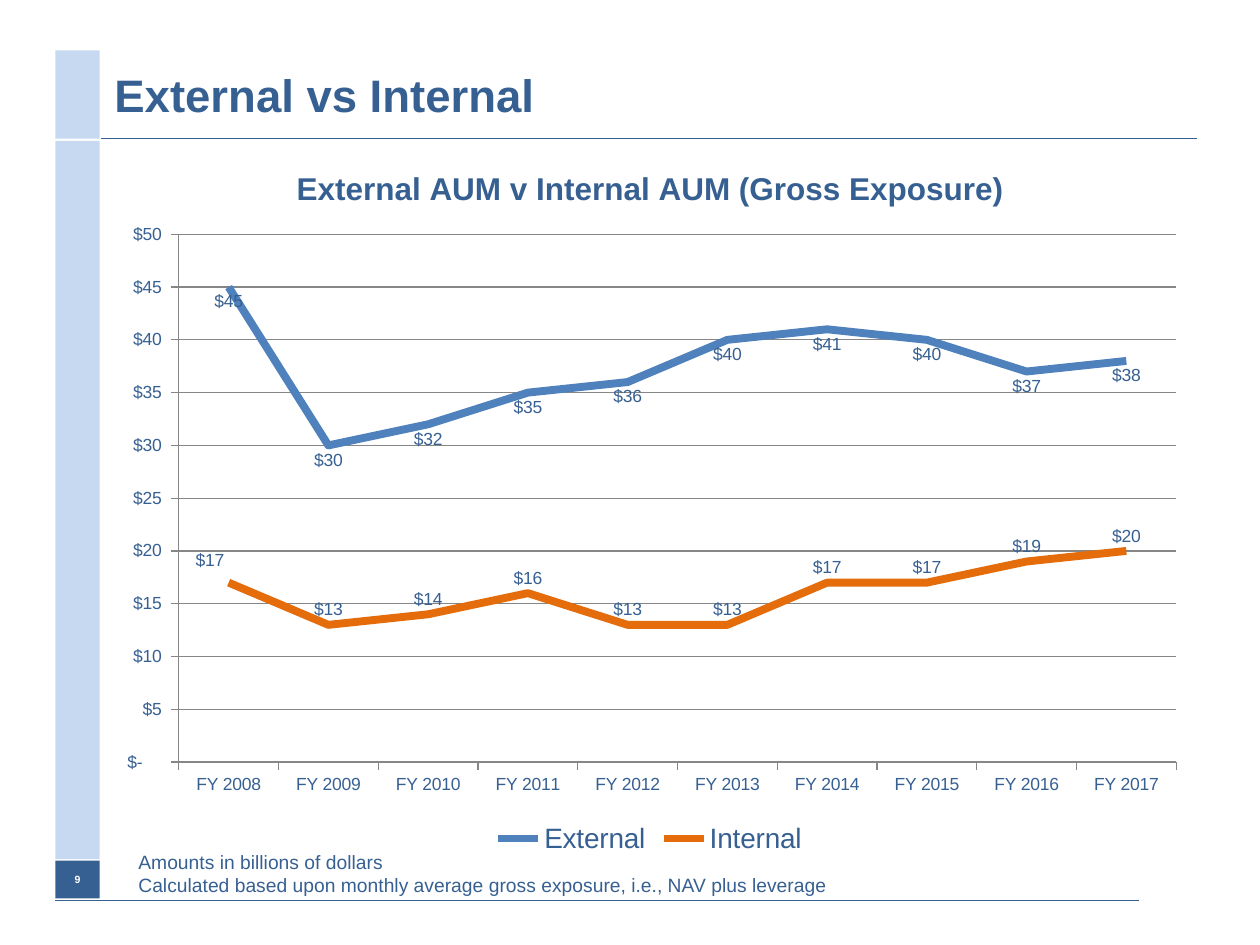
"""Build the External vs Internal slide with its line chart."""
from dataclasses import dataclass

from lxml.etree import SubElement
from pptx import Presentation
from pptx.chart.data import CategoryChartData
from pptx.dml.color import RGBColor
from pptx.enum.chart import XL_CHART_TYPE as ChartType
from pptx.enum.chart import XL_LABEL_POSITION as LabelPos
from pptx.enum.chart import XL_LEGEND_POSITION as LegendPos
from pptx.enum.chart import XL_MARKER_STYLE as Marker
from pptx.enum.chart import XL_TICK_MARK as Tick
from pptx.enum.shapes import MSO_CONNECTOR as Connector
from pptx.enum.shapes import MSO_SHAPE as Shape
from pptx.enum.text import MSO_ANCHOR as Anchor
from pptx.enum.text import PP_ALIGN as Align
from pptx.oxml import parse_xml
from pptx.oxml.ns import nsdecls, qn
from pptx.util import Pt

NAVY = RGBColor(0x37, 0x60, 0x92)
PALE = RGBColor(0xC6, 0xD9, 0xF1)
WHITE = RGBColor(0xFF, 0xFF, 0xFF)
BLUE = RGBColor(0x4F, 0x81, 0xBD)
ORANGE = RGBColor(0xE4, 0x6C, 0x0A)
GREY = RGBColor(0x86, 0x86, 0x86)
FONT = "Arial"
DOLLARS = '_("$"* #,##0_);_("$"* \\(#,##0\\);_("$"* "-"??_);_(@_)'


@dataclass(frozen=True)
class Box:
    left: float
    top: float
    width: float
    height: float

    def lengths(self) -> tuple:
        return Pt(self.left), Pt(self.top), Pt(self.width), Pt(self.height)


@dataclass(frozen=True)
class Rule:
    start: float
    end: float
    y: float
    weight: float


@dataclass(frozen=True)
class Trend:
    name: str
    values: tuple
    color: RGBColor
    label_position: LabelPos


SIDE_LEFT, SIDE_WIDTH = 31.7, 25.2
SIDE_BLOCKS = (
    Box(SIDE_LEFT, 80.6, SIDE_WIDTH, 410.4),
    Box(SIDE_LEFT, 28.8, SIDE_WIDTH, 50.4),
)
PAGE_BLOCK = Box(SIDE_LEFT, 491.8, SIDE_WIDTH, 21.6)
RULES = (Rule(SIDE_LEFT, 650.9, 514.8, 0.75), Rule(57.6, 684, 79.2, 1))
HEADING = Box(58.3, 28.8, 625.7, 50.4)
FOOTNOTE = Box(72, 484.6, 576, 28.8)
CHART = Box(58.3, 80.6, 626.4, 410.4)
PLOT = {"x": 0.07, "y": 0.13, "w": 0.91, "h": 0.735}
YEARS = [f"FY {year}" for year in range(2008, 2018)]
TRENDS = (
    Trend("External", (45, 30, 32, 35, 36, 40, 41, 40, 37, 38), BLUE, LabelPos.BELOW),
    Trend("Internal", (17, 13, 14, 16, 13, 13, 17, 17, 19, 20), ORANGE, LabelPos.ABOVE),
)


def style_font(font, size: float, color: RGBColor = NAVY, bold: bool = False) -> None:
    font.name, font.size, font.bold = FONT, Pt(size), bold
    font.color.rgb = color


def style_line(line, color: RGBColor, weight: float) -> None:
    line.color.rgb, line.width = color, Pt(weight)


def write(frame, text: str, size: float, color: RGBColor = NAVY,
          bold: bool = False, align: Align = Align.LEFT) -> None:
    frame.word_wrap, frame.vertical_anchor = True, Anchor.MIDDLE
    frame.text = text
    for paragraph in frame.paragraphs:
        paragraph.alignment = align
        for run in paragraph.runs:
            style_font(run.font, size, color, bold)


def add_block(slide, box: Box, color: RGBColor):
    block = slide.shapes.add_shape(Shape.RECTANGLE, *box.lengths())
    block.shadow.inherit = False
    block.fill.solid()
    block.fill.fore_color.rgb = color
    block.line.fill.background()
    return block


def add_rule(slide, rule: Rule) -> None:
    line = slide.shapes.add_connector(
        Connector.STRAIGHT, Pt(rule.start), Pt(rule.y), Pt(rule.end), Pt(rule.y))
    style_line(line.line, NAVY, rule.weight)
    SubElement(line._element.spPr, qn("a:effectLst"))


def manual_layout(places: dict, inner: bool = False):
    modes = {"layoutTarget": "inner", "xMode": "edge", "yMode": "edge"} if inner else {}
    fields = "".join(f'<c:{key} val="{value}"/>' for key, value in (modes | places).items())
    return parse_xml(f"<c:layout {nsdecls('c')}><c:manualLayout>{fields}"
                     "</c:manualLayout></c:layout>")


def style_trend(series, trend: Trend) -> None:
    series.smooth = False
    series.marker.style = Marker.NONE
    style_line(series.format.line, trend.color, 4.5)
    labels = series.data_labels
    labels.show_value = True
    labels.position = trend.label_position
    labels.number_format, labels.number_format_is_linked = DOLLARS, False
    style_font(labels.font, 10)


def shift_first_label(series) -> None:
    label = series.points[0].data_label
    style_font(label.font, 10)
    label.position = LabelPos.ABOVE
    index = series._element.find(".//" + qn("c:dLbl")).find(qn("c:idx"))
    number_format = parse_xml(f'<c:numFmt {nsdecls("c")} sourceLinked="0"/>')
    number_format.set("formatCode", DOLLARS)
    index.addnext(number_format)
    index.addnext(manual_layout({"x": -0.017, "y": -0.01}))


def add_trend_chart(slide) -> None:
    data = CategoryChartData(number_format=DOLLARS)
    data.categories = YEARS
    for trend in TRENDS:
        data.add_series(trend.name, trend.values)
    chart = slide.shapes.add_chart(ChartType.LINE, *CHART.lengths(), data).chart
    style_font(chart.font, 10)
    chart.has_title = True
    write(chart.chart_title.text_frame, "External AUM v Internal AUM (Gross Exposure)",
          18, bold=True, align=Align.CENTER)
    chart.has_legend = True
    chart.legend.position, chart.legend.include_in_layout = LegendPos.BOTTOM, False
    style_font(chart.legend.font, 16)
    for axis in (chart.category_axis, chart.value_axis):
        axis.major_tick_mark, axis.minor_tick_mark = Tick.OUTSIDE, Tick.NONE
        style_line(axis.format.line, GREY, 0.75)
        style_font(axis.tick_labels.font, 10)
    amounts = chart.value_axis
    amounts.minimum_scale, amounts.maximum_scale, amounts.major_unit = 0, 50, 5
    amounts.tick_labels.number_format = DOLLARS
    amounts.tick_labels.number_format_is_linked = False
    style_line(amounts.major_gridlines.format.line, GREY, 0.75)
    plot = chart.plots[0]
    plot.vary_by_categories = False
    for series, trend in zip(plot.series, TRENDS):
        style_trend(series, trend)
    shift_first_label(plot.series[1])
    area = chart._chartSpace.chart.plotArea
    for layout in area.findall(qn("c:layout")):
        area.remove(layout)
    area.insert(0, manual_layout(PLOT, inner=True))


def main() -> None:
    deck = Presentation()
    deck.slide_width, deck.slide_height = Pt(720), Pt(540)
    slide = deck.slides.add_slide(deck.slide_layouts[6])
    for block in SIDE_BLOCKS:
        add_block(slide, block, PALE)
    for rule in RULES:
        add_rule(slide, rule)
    page = add_block(slide, PAGE_BLOCK, NAVY)
    write(page.text_frame, "9", 6, WHITE, True, Align.CENTER)
    heading = slide.shapes.add_textbox(*HEADING.lengths())
    write(heading.text_frame, "External vs Internal", 26, bold=True)
    footnote = slide.shapes.add_textbox(*FOOTNOTE.lengths())
    write(footnote.text_frame, "Amounts in billions of dollars\nCalculated based upon "
          "monthly average gross exposure, i.e., NAV plus leverage", 11)
    add_trend_chart(slide)
    deck.save("out.pptx")


if __name__ == "__main__":
    main()
